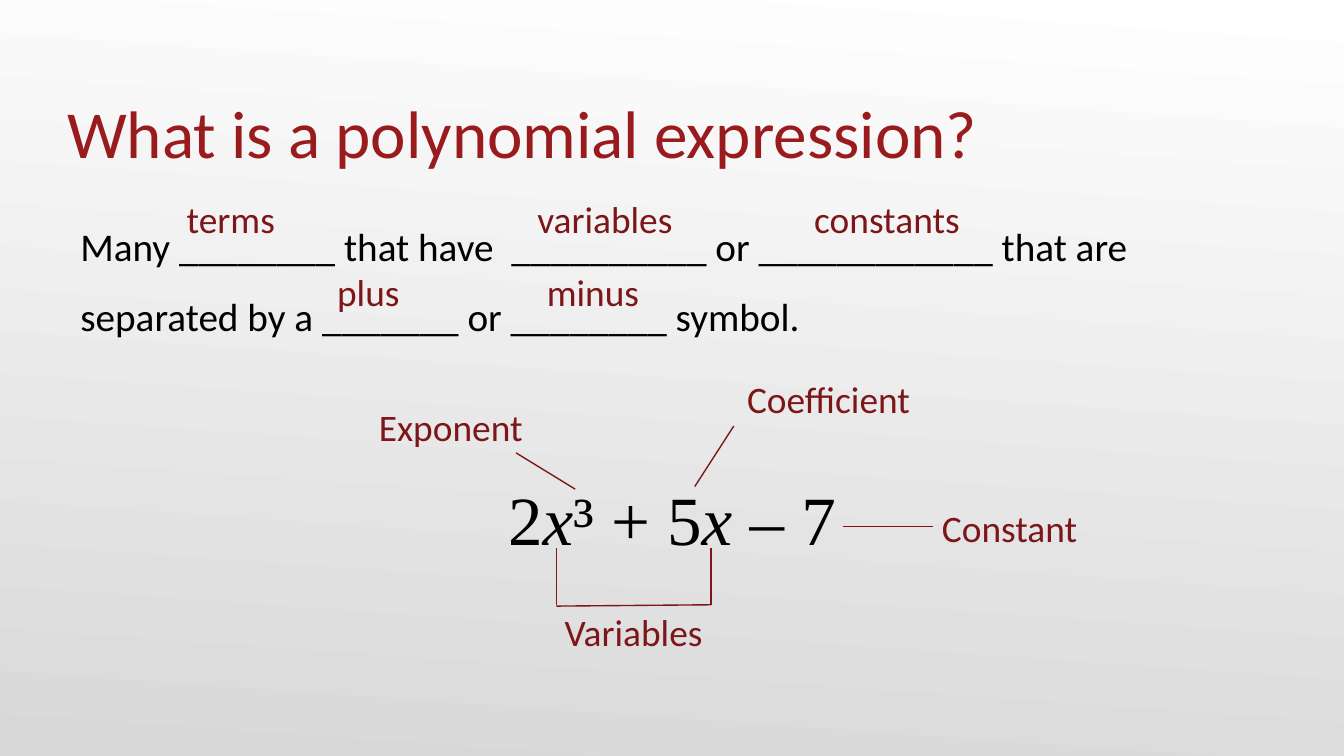
from lxml import etree
from pptx import Presentation
from pptx.dml.color import RGBColor
from pptx.enum import shapes, text
from pptx.oxml import ns
from pptx.util import Inches, Pt

WHITE = RGBColor(0xFF, 0xFF, 0xFF)
GREY = RGBColor(0xD8, 0xD8, 0xD8)
BLACK = RGBColor(0, 0, 0)
RED = RGBColor(0x99, 0x1B, 0x1E)
DARK_RED = RGBColor(0x7D, 0x16, 0x19)

TITLE = "What is a polynomial expression?"
SENTENCE = (
    "Many ________ that have  __________ or ____________ that are "
    "separated by a _______ or ________ symbol."
)
FORMULA = [("2", False), ("x", True), ("³ + 5", False), ("x", True), (" – 7", False)]
LABEL_HEIGHT = 0.47
LABELS = [
    ("terms", 1.29, 1.36, 1.12),
    ("variables", 3.9, 1.36, 1.26),
    ("constants", 5.96, 1.36, 1.5),
    ("plus", 2.41, 1.9, 1.12),
    ("minus", 3.97, 1.9, 1.12),
    ("Exponent", 2.72, 2.91, 1.41),
    ("Coefficient", 5.46, 2.7, 1.71),
    ("Variables", 4.05, 4.43, 1.33),
    ("Constant", 6.91, 3.66, 1.71),
]
CENTERED_LABEL = "Variables"
POINTERS = [
    (3.84, 3.37, 4.28, 3.64),
    (5.46, 3.17, 5.17, 3.62),
    (4.14, 4.08, 4.14, 4.5),
    (5.29, 4.08, 5.29, 4.5),
    (4.14, 4.51, 5.29, 4.5),
    (6.94, 3.92, 6.27, 3.92),
]


def style(font, name, size, color):
    font.name = name
    font.size = Pt(size)
    font.color.rgb = color


def add_text_frame(slide, box, insets):
    text_frame = slide.shapes.add_textbox(*map(Inches, box)).text_frame
    text_frame.word_wrap = True
    (text_frame.margin_left, text_frame.margin_top,
     text_frame.margin_right, text_frame.margin_bottom) = map(Inches, insets)
    return text_frame


def paint_background(slide):
    fill = slide.background.fill
    fill.gradient()
    fill.gradient_angle = 266
    for stop, position, color in zip(fill.gradient_stops, (0, 1), (WHITE, GREY)):
        stop.position = position
        stop.color.rgb = color


def add_title(slide):
    text_frame = add_text_frame(slide, (0.5, 0.34, 9, 0.94), (0, 0.05, 0, 0))
    text_frame.vertical_anchor = text.MSO_ANCHOR.BOTTOM
    text_frame.text = TITLE
    style(text_frame.paragraphs[0].runs[0].font, "Calibri", 36, RED)


def add_body(slide):
    text_frame = add_text_frame(slide, (0.5, 1.43, 9, 3.76), (0.1, 0.05, 0.1, 0.05))
    text_frame.text = SENTENCE
    sentence = text_frame.paragraphs[0]
    sentence.line_spacing = 1.5
    style(sentence.runs[0].font, "Calibri", 21, BLACK)
    formula = text_frame.add_paragraph()
    formula.alignment = text.PP_ALIGN.CENTER
    formula.space_before = Pt(73)
    for part, italic in FORMULA:
        run = formula.add_run()
        run.text = part
        style(run.font, "Times New Roman", 37, BLACK)
        run.font.italic = italic


def add_label(slide, label, left, top, width):
    text_frame = add_text_frame(slide, (left, top, width, LABEL_HEIGHT), (0.1,) * 4)
    text_frame.text = label
    paragraph = text_frame.paragraphs[0]
    if label == CENTERED_LABEL:
        paragraph.alignment = text.PP_ALIGN.CENTER
    style(paragraph.runs[0].font, "Calibri", 20, DARK_RED)


def add_pointer(slide, ends):
    pointer = slide.shapes.add_connector(shapes.MSO_CONNECTOR.STRAIGHT, *map(Inches, ends))
    pointer.line.color.rgb = DARK_RED
    pointer.line.width = Pt(0.75)
    etree.SubElement(pointer._element.spPr, ns.qn("a:effectLst"))


def main():
    presentation = Presentation()
    presentation.slide_width = Inches(10)
    presentation.slide_height = Inches(10) * 9 // 16
    slide = presentation.slides.add_slide(presentation.slide_layouts[6])
    paint_background(slide)
    add_body(slide)
    add_title(slide)
    for label in LABELS:
        add_label(slide, *label)
    for ends in POINTERS:
        add_pointer(slide, ends)
    presentation.save("out.pptx")


if __name__ == "__main__":
    main()
